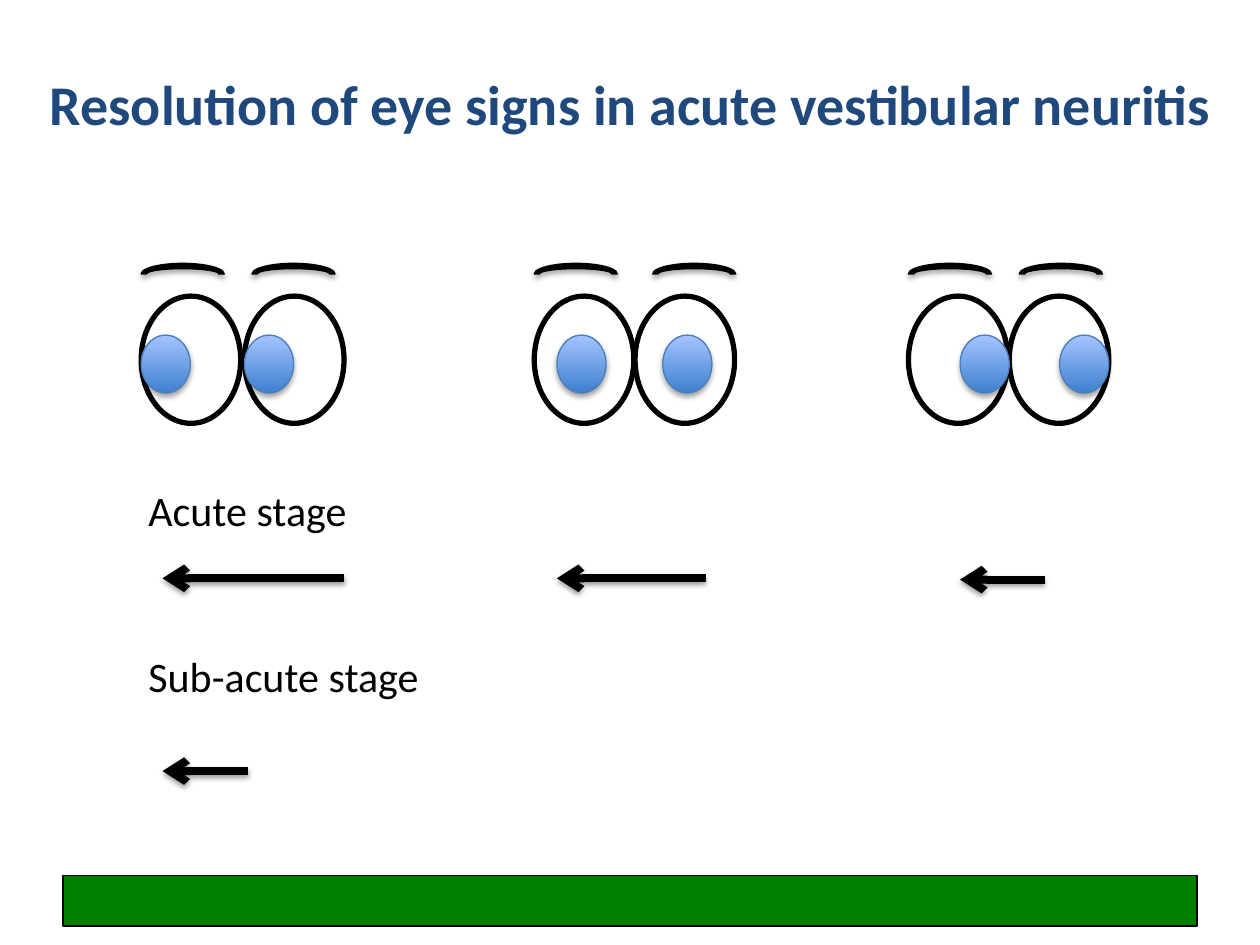
from lxml import etree
from pptx import Presentation
from pptx.dml.color import RGBColor
from pptx.enum.shapes import MSO_CONNECTOR, MSO_SHAPE
from pptx.enum.text import MSO_ANCHOR, PP_ALIGN
from pptx.oxml.ns import qn
from pptx.util import Inches, Pt

OVAL, ARC, BAR = MSO_SHAPE.OVAL, MSO_SHAPE.BLOCK_ARC, MSO_SHAPE.RECTANGLE
STRAIGHT = MSO_CONNECTOR.STRAIGHT
MIDDLE, TOP = MSO_ANCHOR.MIDDLE, MSO_ANCHOR.TOP
CENTER, LEFT = PP_ALIGN.CENTER, PP_ALIGN.LEFT

COLORS = {"title": "1F497D", "ink": "000000", "footer": "008000",
          "iris_low": "3F80CE", "iris_high": "A4C4FF", "iris_line": "4B7EBC"}
FONT = "Calibri"
TITLE = "Resolution of eye signs in acute vestibular neuritis"
STAGES = [("Acute stage", 3.8, 2.06), ("Sub-acute stage", 5.11, 2.6)]

EYE, IRIS, BROW = (0.79, 1.01), (0.39, 0.46), (0.66, 0.17)
EYE_TOP, IRIS_TOP, BROW_TOP = 2.35, 2.66, 2.09
FACES = [
    {"left": 1.12, "eyes": (0, 0.82), "irises": (0, 0.82), "brows": (0, 0.88)},
    {"left": 4.24, "eyes": (0, 0.8), "irises": (0.18, 1.02), "brows": (0, 0.94)},
    {"left": 7.21, "eyes": (0, 0.8), "irises": (0.41, 1.2), "brows": (0, 0.88)},
]
ARROWS = [(2.73, 1.29, 4.59), (5.6, 4.42, 4.59), (8.29, 7.62, 4.6), (1.97, 1.29, 6.12)]


def rgb(name):
    return RGBColor.from_string(COLORS[name])


def add_shadow(item, distance, opacity):
    properties = item._element.spPr
    effects = properties.find(qn("a:effectLst"))
    if effects is None:
        effects = etree.SubElement(properties, qn("a:effectLst"))
    shadow = etree.SubElement(effects, qn("a:outerShdw"), blurRad=str(Pt(3.1)),
                              dist=str(Pt(distance)), dir="5400000", rotWithShape="0")
    color = etree.SubElement(shadow, qn("a:srgbClr"), val=COLORS["ink"])
    etree.SubElement(color, qn("a:alpha"), val=str(opacity * 1000))


def add_figure(page, kind, left, top, size, fill=None, line="ink", weight=0.75):
    figure = page.shapes.add_shape(kind, *map(Inches, (left, top, *size)))
    figure.shadow.inherit = False
    if fill:
        figure.fill.solid()
        figure.fill.fore_color.rgb = rgb(fill)
    else:
        figure.fill.background()
    figure.line.color.rgb = rgb(line)
    figure.line.width = Pt(weight)
    return figure


def add_iris(page, left):
    iris = add_figure(page, OVAL, left, IRIS_TOP, IRIS, line="iris_line")
    iris.fill.gradient()
    iris.fill.gradient_angle = 90
    for stop, name in zip(iris.fill.gradient_stops, ("iris_low", "iris_high")):
        stop.color.rgb = rgb(name)
    add_shadow(iris, 1.8, 35)


def add_face(page, face):
    left = face["left"]
    for offset in face["eyes"]:
        add_figure(page, OVAL, left + offset, EYE_TOP, EYE, weight=3)
    for offset in face["irises"]:
        add_iris(page, left + offset)
    for offset in face["brows"]:
        brow = add_figure(page, ARC, left + offset, BROW_TOP, BROW, "ink")
        add_shadow(brow, 1.8, 35)


def add_text(page, text, place, size, color, bold=False, align=LEFT, anchor=TOP):
    box = page.shapes.add_textbox(*map(Inches, place))
    box.text_frame.word_wrap = True
    box.text_frame.vertical_anchor = anchor
    para = box.text_frame.paragraphs[0]
    para.alignment = align
    span = para.add_run()
    span.text = text
    span.font.name, span.font.size, span.font.bold = FONT, Pt(size), bold
    span.font.color.rgb = rgb(color)


def add_arrow(page, start, end, height):
    arrow = page.shapes.add_connector(STRAIGHT, *map(Inches, (start, height, end, height)))
    arrow.line.color.rgb = rgb("ink")
    arrow.line.width = Pt(4.5)
    etree.SubElement(arrow.line._get_or_add_ln(), qn("a:tailEnd"), type="arrow")
    add_shadow(arrow, 1.6, 38)


def main():
    """Build the slide on eye signs in vestibular neuritis."""
    deck = Presentation()
    deck.slide_width, deck.slide_height = Inches(10), Inches(7.5)
    page = deck.slides.add_slide(deck.slide_layouts[6])
    add_figure(page, BAR, 0.5, 6.95, (9, 0.4), "footer")
    add_text(page, TITLE, (0.27, 0.3, 9.47, 1.03), 32, "title", True, CENTER, MIDDLE)
    for face in FACES:
        add_face(page, face)
    for label, top, width in STAGES:
        add_text(page, label, (1.08, top, width, 0.5), 24, "ink")
    for arrow in ARROWS:
        add_arrow(page, *arrow)
    deck.save("out.pptx")


if __name__ == "__main__":
    main()
